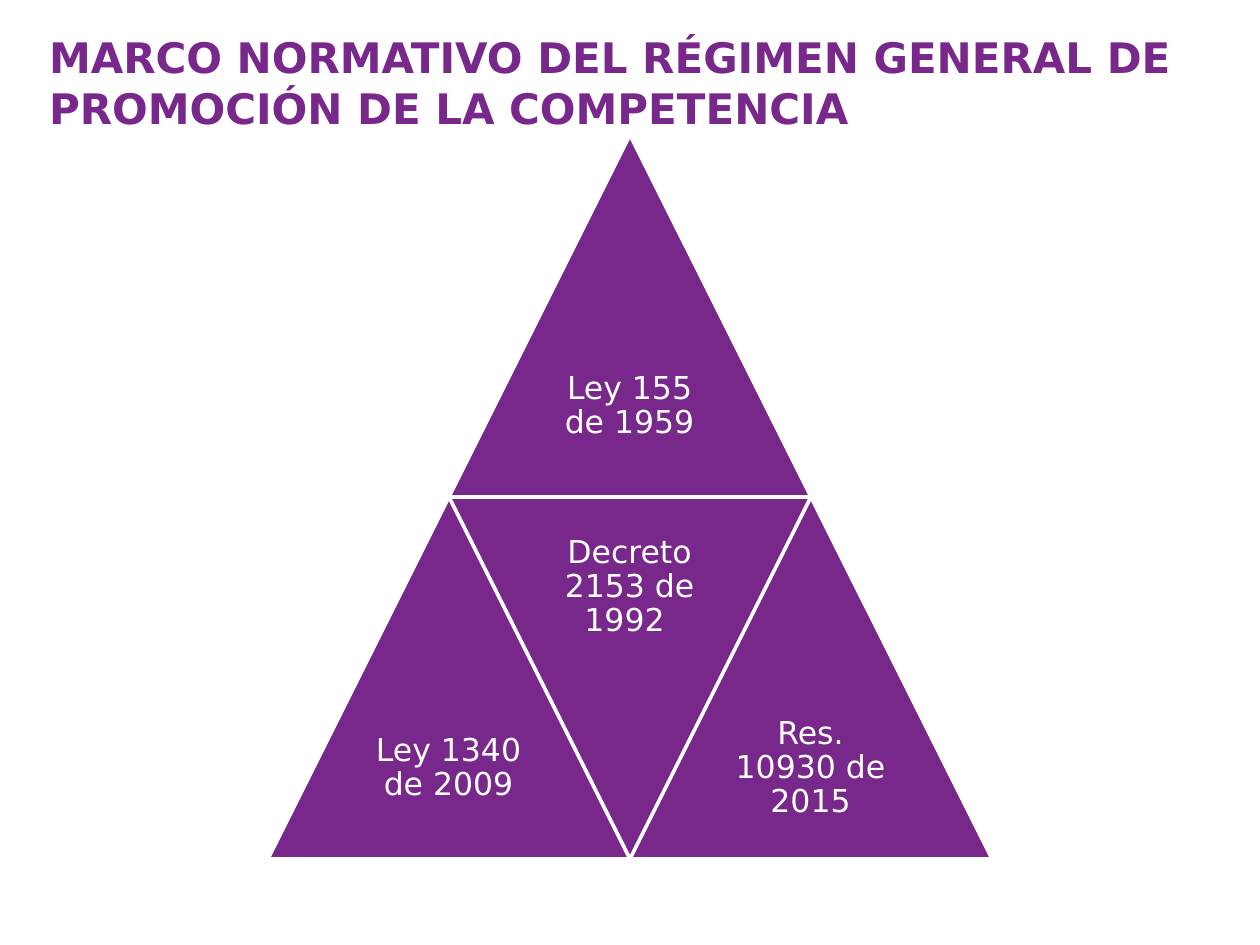
"""Build the slide with the competition law triangle."""
from dataclasses import dataclass

from pptx import Presentation
from pptx.dml.color import RGBColor
from pptx.enum.shapes import MSO_SHAPE
from pptx.enum.text import MSO_ANCHOR, PP_ALIGN
from pptx.slide import Slide
from pptx.util import Emu, Pt

PURPLE = RGBColor(0x78, 0x27, 0x8B)
WHITE = RGBColor(0xFF, 0xFF, 0xFF)
FONT = "DejaVu Sans"
TITLE = "MARCO NORMATIVO DEL RÉGIMEN GENERAL DE PROMOCIÓN DE LA COMPETENCIA"
CENTER, TOP, SIDE = 630, 135, 362
HALF = SIDE // 2


def px(n: int) -> Emu:
    return Emu(round(n * 914400 / 126))


@dataclass
class Norm:
    text: str
    column: int
    row: int
    inverted: bool = False


NORMS = [
    Norm("Ley 155 de 1959", 0, 0),
    Norm("Ley 1340 de 2009", -1, 1),
    Norm("Decreto 2153 de 1992 ", 0, 1, True),
    Norm("Res. 10930 de 2015", 1, 1),
]


def add_text(s: Slide, text: str, box: tuple[int, int, int, int],
             inset: tuple[int, int], para: dict, font: dict, color: RGBColor) -> None:
    tf = s.shapes.add_textbox(*map(px, box)).text_frame
    side, end = map(px, inset)
    frame = dict(word_wrap=True, vertical_anchor=MSO_ANCHOR.MIDDLE,
                 margin_left=side, margin_right=side, margin_top=end, margin_bottom=end)
    p = tf.paragraphs[0]
    r = p.add_run()
    r.text = text
    for target, values in ((tf, frame), (p, para), (r.font, dict(name=FONT, **font))):
        for key, value in values.items():
            setattr(target, key, value)
    r.font.color.rgb = color


def add_norm(s: Slide, norm: Norm) -> None:
    left = CENTER - HALF + norm.column * HALF
    top = TOP + norm.row * SIDE
    sp = s.shapes.add_shape(MSO_SHAPE.ISOSCELES_TRIANGLE, *map(px, (left, top, SIDE, SIDE)))
    sp.shadow.inherit = False
    sp.rotation = 180 if norm.inverted else 0
    sp.fill.solid()
    sp.fill.fore_color.rgb = PURPLE
    sp.line.color.rgb = WHITE
    sp.line.width = Pt(2)
    text_top = top if norm.inverted else top + HALF
    add_text(s, norm.text, (left + HALF // 2, text_top, HALF, HALF), (9, 9),
             dict(alignment=PP_ALIGN.CENTER, line_spacing=0.9), dict(size=Pt(18)), WHITE)


def main() -> None:
    prs = Presentation()
    prs.slide_width, prs.slide_height = px(1260), px(945)
    s = prs.slides.add_slide(prs.slide_layouts[6])
    for norm in NORMS:
        add_norm(s, norm)
    add_text(s, TITLE, (36, 27, 1190, 110), (13, 6),
             dict(alignment=PP_ALIGN.LEFT), dict(size=Pt(24), bold=True), PURPLE)
    prs.save("out.pptx")


if __name__ == "__main__":
    main()
